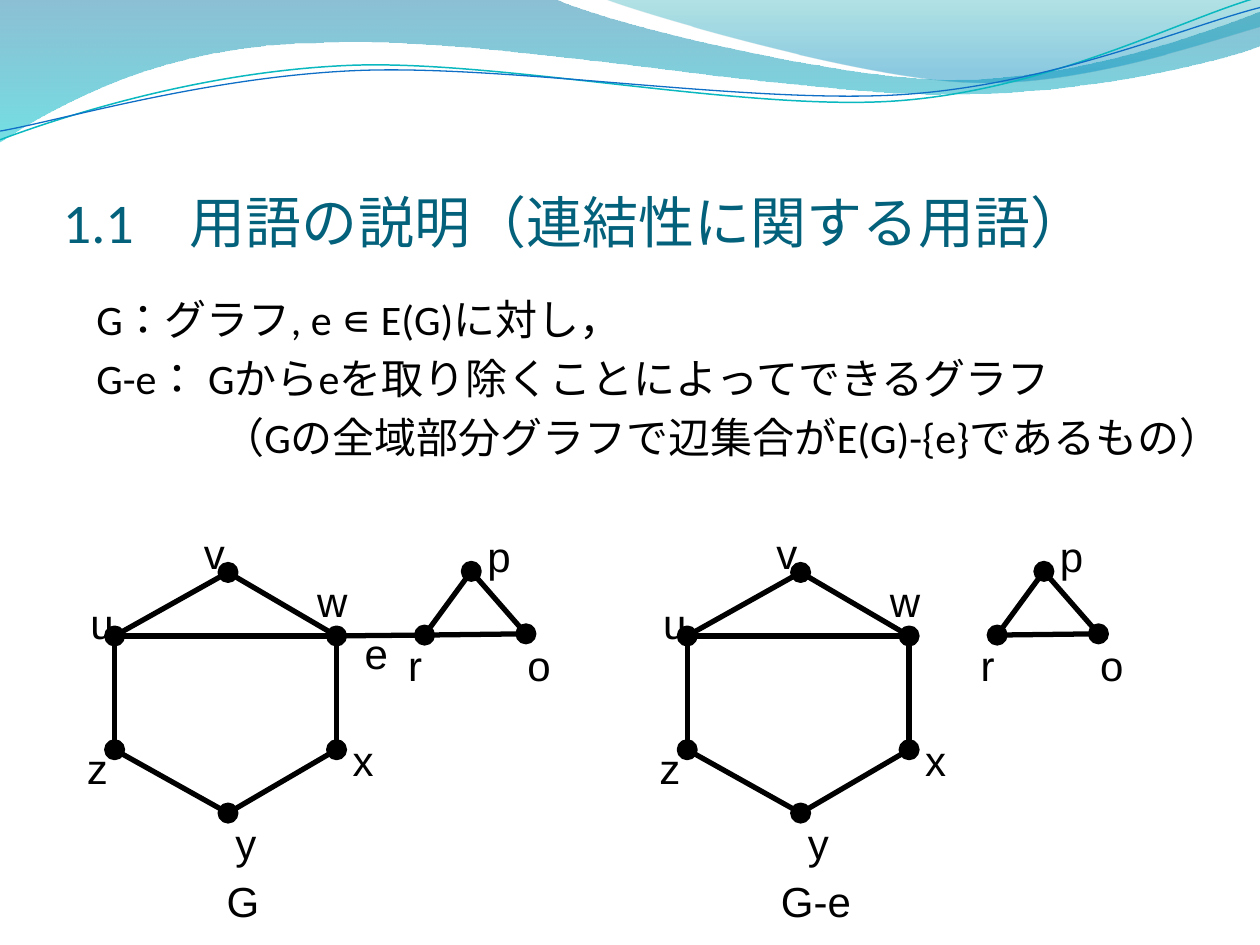
"""Build the slide on removing an edge e from a connected graph G."""
import pptx
import pptx.dml.color
import pptx.enum.lang
import pptx.enum.shapes
import pptx.enum.text
import pptx.util
import lxml.etree

Pt = pptx.util.Pt
RGBColor = pptx.dml.color.RGBColor
BLACK = RGBColor(0x00, 0x00, 0x00)
TITLE_TEAL = RGBColor(0x04, 0x61, 0x7B)
DEEP_BLUE = RGBColor(0x00, 0x74, 0xA1)
AQUA = RGBColor(0x00, 0xC6, 0xCF)
SEA_GREEN = RGBColor(0x00, 0xA1, 0xA9)
SKY_BLUE = RGBColor(0x00, 0x8B, 0xBF)
TEAL_LINE = RGBColor(0x0A, 0xB8, 0xBF)
BLUE_LINE = RGBColor(0x0F, 0x6F, 0xC6)

TITLE = "1.1　用語の説明（連結性に関する用語）"
HANGING = 21.6
DEFINITIONS = [
    ("G：グラフ, e ∊ E(G)に対し，", -HANGING),
    ("G-e： Gからeを取り除くことによってできるグラフ", -HANGING),
    ("（Gの全域部分グラフで辺集合がE(G)-{e}であるもの）", 72 - HANGING),
]

BANDS = [
    ((0, -0.7),
     [((316.8, -0.7),),
      ((342.7, 12.2), (478.1, 45.4), (545.8, 45.4)),
      ((614.2, 45.4), (689.8, 18.7), (720, 6.5)),
      ((720.7, 25.9),),
      ((707.8, 31.7), (626.4, 54.7), (537.1, 54)),
      ((447.8, 54), (275, 20.2), (185, 24.5)),
      ((92.9, 25.2), (33.1, 59.8), (-0.7, 81.4))],
     [(0, DEEP_BLUE, 45), (1, AQUA, 55)]),
    ((344.9, -0.7),
     [((366.5, 7.9), (491, 44.6), (553.7, 46.8)),
      ((616.3, 49.7), (691.9, 23), (720, 15.1)),
      ((720, 0),)],
     [(0, SEA_GREEN, 30), (0.8, SKY_BLUE, 45)]),
]
RIPPLES = [
    ((0, 79.9),
     [((34.6, 67), (113.8, 41), (199.4, 37.4)),
      ((284.4, 33.8), (427, 64.1), (513.4, 57.6)),
      ((599.8, 51.1), (675.4, 10.8), (718.6, -1.4))],
     TEAL_LINE, 0.85),
    ((0, 74.9),
     [((33.8, 69.1), (118.1, 43.9), (203.8, 40.3)),
      ((290.2, 36.7), (429.8, 59.8), (516.2, 54)),
      ((601.9, 48.2), (677.5, 15.1), (720, 4.3))],
     BLUE_LINE, 0.75),
]

VERTICES = {
    "u": (65.5, 363.4), "v": (130.3, 327.1), "w": (192.3, 363.4),
    "x": (192.3, 428.4), "y": (130.3, 464.6), "z": (65.5, 428.4),
    "r": (242.6, 362.9), "o": (300.5, 362.2), "p": (269.3, 326.5),
}
SHARED_EDGES = ["uv", "vw", "uz", "zy", "yx", "wx", "uw", "op", "rp", "ro"]
BRIDGE = "wr"
LABELS = {
    "u": (44.6, 337.7, 22.3, 28.8), "v": (109.4, 298.1, 20.9, 28.8),
    "w": (174.2, 325.4, 32.4, 36.7), "x": (194.4, 416.2, 20.9, 28.8),
    "y": (127.4, 463.7, 20.9, 28.8), "z": (42.5, 420.5, 20.9, 28.8),
    "o": (294.3, 361.9, 22.3, 28.8), "p": (271.4, 299.5, 22.3, 28.8),
    "r": (226.1, 361.9, 22.3, 36.7),
}
BRIDGE_LABEL = (201.3, 355, 28.1, 36.7)
GRAPHS = [
    (0, SHARED_EDGES + [BRIDGE],
     {**LABELS, "e": BRIDGE_LABEL, "G": (122.4, 496.8, 33.1, 36.7)}),
    (327.2, SHARED_EDGES, {**LABELS, "G-e": (112, 496.8, 54.7, 36.7)}),
]
DOT = 10


def add_outline(slide, start, pieces, close):
    """Draw a freeform of straight (one point) and cubic (three point) pieces."""
    builder = slide.shapes.build_freeform(Pt(start[0]), Pt(start[1]), scale=1.0)
    builder.add_line_segments(
        [(Pt(x), Pt(y)) for piece in pieces for x, y in piece], close=close)
    outline = builder.convert_to_shape()
    outline.shadow.inherit = False
    steps = iter(list(outline._element.spPr.iter(pptx.oxml.ns.qn("a:lnTo"))))
    for piece in pieces:
        step, *others = [next(steps) for _ in piece]
        if others:
            step.addprevious(curve := lxml.etree.Element(pptx.oxml.ns.qn("a:cubicBezTo")))
            for corner in (step, *others):
                curve.append(corner[0])
                corner.getparent().remove(corner)
    return outline


def add_band(slide, start, pieces, stops):
    """Add a translucent gradient band."""
    band = add_outline(slide, start, pieces, True)
    band.line.fill.background()
    band.fill.gradient()
    band.fill.gradient_angle = 270
    for stop, (position, color, _) in zip(band.fill.gradient_stops, stops):
        stop.position = position
        stop.color.rgb = color
    tints = band._element.spPr.iter(pptx.oxml.ns.qn("a:srgbClr"))
    for tint, (_, _, opacity) in zip(list(tints), stops):
        lxml.etree.SubElement(tint, pptx.oxml.ns.qn("a:alpha"), val=str(opacity * 1000))


def add_ripple(slide, start, pieces, color, width):
    """Add a thin wave line."""
    ripple = add_outline(slide, start, pieces, False)
    ripple.fill.background()
    ripple.line.color.rgb = color
    ripple.line.width = Pt(width)


def add_text(slide, box, lines, size, font, color, wrap=True):
    """Add a text box with one paragraph per line."""
    frame = slide.shapes.add_textbox(*map(Pt, box)).text_frame
    frame.word_wrap = wrap
    frame.text = "\n".join(lines)
    for paragraph in frame.paragraphs:
        for run in paragraph.runs:
            run.font.size = Pt(size)
            run.font.name = font
            run.font.color.rgb = color
            run.font.language_id = pptx.enum.lang.MSO_LANGUAGE_ID.JAPANESE
    return frame


def add_graph(slide, shift, edges, labels):
    """Draw edges, vertices and labels moved right by shift."""
    centres = {name: (x + shift, y) for name, (x, y) in VERTICES.items()}
    for start, end in edges:
        edge = slide.shapes.add_connector(
            pptx.enum.shapes.MSO_CONNECTOR.STRAIGHT,
            *map(Pt, centres[start] + centres[end]))
        edge.line.color.rgb = BLACK
        edge.line.width = Pt(3)
        lxml.etree.SubElement(edge._element.spPr, pptx.oxml.ns.qn("a:effectLst"))
    for x, y in centres.values():
        vertex = slide.shapes.add_shape(
            pptx.enum.shapes.MSO_SHAPE.OVAL,
            Pt(x - DOT / 2), Pt(y - DOT / 2), Pt(DOT), Pt(DOT))
        vertex.shadow.inherit = False
        vertex.fill.solid()
        vertex.fill.fore_color.rgb = BLACK
        vertex.line.color.rgb = BLACK
        vertex.line.width = Pt(2)
    for label, (left, top, width, height) in labels.items():
        caption = add_text(slide, (left + shift, top, width, height), [label],
                           24, "Arial", BLACK, wrap=False)
        caption.auto_size = pptx.enum.text.MSO_AUTO_SIZE.SHAPE_TO_FIT_TEXT


def main():
    """Compose and save the slide."""
    deck = pptx.Presentation()
    deck.slide_width, deck.slide_height = Pt(720), Pt(540)
    slide = deck.slides.add_slide(deck.slide_layouts[6])
    for band in BANDS:
        add_band(slide, *band)
    for ripple in RIPPLES:
        add_ripple(slide, *ripple)

    title = add_text(slide, (36, 55.4, 648, 90), [TITLE], 32, "Calibri", TITLE_TEAL)
    title.vertical_anchor = pptx.enum.text.MSO_ANCHOR.BOTTOM
    title.margin_left = title.margin_right = title.margin_bottom = 0

    body = add_text(slide, (48, 164.2, 672, 336), [text for text, _ in DEFINITIONS],
                    24, "Calibri", BLACK)
    for paragraph, (_, indent) in zip(body.paragraphs, DEFINITIONS):
        paragraph.space_before = Pt(4.8)
        properties = paragraph._p.get_or_add_pPr()
        properties.set("marL", str(Pt(HANGING)))
        properties.set("indent", str(Pt(indent)))

    for graph in GRAPHS:
        add_graph(slide, *graph)
    deck.save("out.pptx")


if __name__ == "__main__":
    main()
